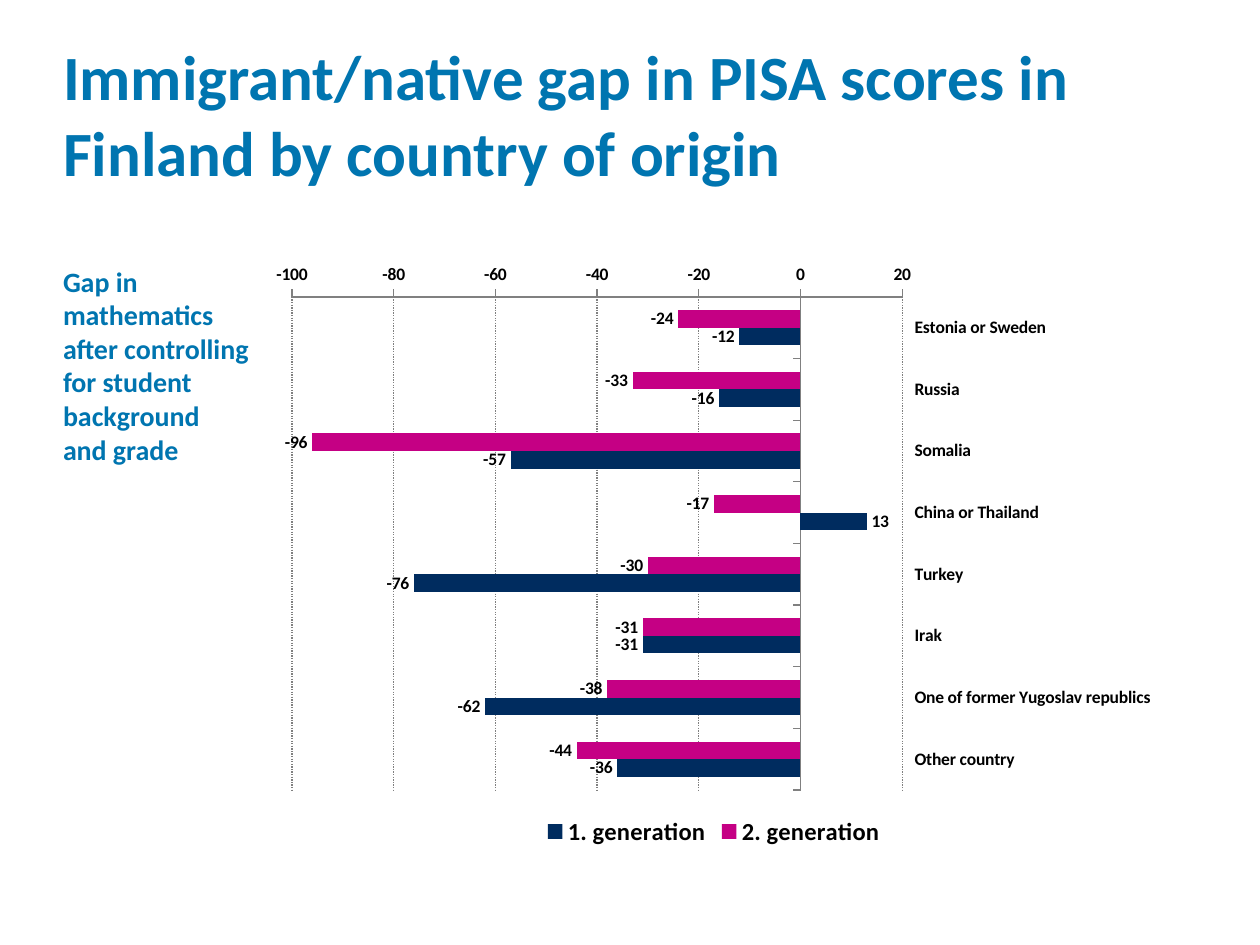
import pptx
import pptx.chart.data
import pptx.dml.color
import pptx.enum.chart
import pptx.enum.dml
import pptx.enum.text
import pptx.oxml
import pptx.oxml.ns
import pptx.util

RGBColor = pptx.dml.color.RGBColor
BLUE = RGBColor(0x00, 0x75, 0xB0)
PINK = RGBColor(0xC5, 0x00, 0x84)
NAVY = RGBColor(0x00, 0x2C, 0x5F)
BLACK = RGBColor(0x00, 0x00, 0x00)
GREY = RGBColor(0x80, 0x80, 0x80)

# Content
HEADING = "Immigrant/native gap in PISA scores in Finland by country of origin"
SUBHEADING = ["Gap in", "mathematics", "after controlling", "for student",
              "background", "and grade"]
COUNTRIES = ["Estonia or Sweden", "Russia", "Somalia", "China or Thailand",
             "Turkey", "Irak", "One of former Yugoslav republics",
             "Other country"]
GENERATIONS = [
    ("2. generation", PINK, [-24, -33, -96, -17, -30, -31, -38, -44]),
    ("1. generation", NAVY, [-12, -16, -57, 13, -76, -31, -62, -36]),
]
# Plot area as shares of the chart's size
PLOT = {"x": 0.037, "y": 0.073, "w": 0.67, "h": 0.824}


def apply_format(target, values):
    for name, value in values.items():
        setattr(target, name, value)


def set_font(font, size, color):
    apply_format(font, {"name": "Calibri", "size": pptx.util.Pt(size), "bold": True})
    font.color.rgb = color


def set_line(line, dash=None):
    line.color.rgb = GREY
    line.width = pptx.util.Pt(0.75)
    if dash:
        line.dash_style = dash


def set_plot_layout(chart, shares):
    parts = "".join(f'<c:{key} val="{value}"/>' for key, value in shares.items())
    layout = pptx.oxml.parse_xml(
        f'<c:layout {pptx.oxml.ns.nsdecls("c")}><c:manualLayout>'
        '<c:layoutTarget val="inner"/><c:xMode val="edge"/><c:yMode val="edge"/>'
        f"{parts}</c:manualLayout></c:layout>")
    plot_area = chart.element.find(".//" + pptx.oxml.ns.qn("c:plotArea"))
    for old in plot_area.findall(pptx.oxml.ns.qn("c:layout")):
        plot_area.remove(old)
    plot_area.insert(0, layout)


def add_heading(slide):
    title = slide.shapes.title
    inches = pptx.util.Inches
    apply_format(title, {"left": inches(0.5), "top": inches(0.3),
                         "width": inches(9), "height": inches(1.25)})
    frame = title.text_frame
    apply_format(frame, {
        "margin_left": 0, "margin_top": 0, "margin_right": 0, "margin_bottom": 0,
        "word_wrap": True, "auto_size": pptx.enum.text.MSO_AUTO_SIZE.NONE,
        "vertical_anchor": pptx.enum.text.MSO_ANCHOR.TOP})
    rows = [(HEADING, 36, 0), ("\v".join(SUBHEADING), 16, 43)]
    for index, (text, size, gap) in enumerate(rows):
        paragraph = frame.add_paragraph() if index else frame.paragraphs[0]
        paragraph.text = text
        paragraph.alignment = pptx.enum.text.PP_ALIGN.LEFT
        paragraph.space_before = pptx.util.Pt(gap)
        for run in paragraph.runs:
            set_font(run.font, size, BLUE)


def add_gap_chart(slide):
    enums = pptx.enum.chart
    data = pptx.chart.data.CategoryChartData(number_format="0")
    data.categories = COUNTRIES
    for name, _, gaps in GENERATIONS:
        data.add_series(name, gaps)
    box = [pptx.util.Inches(v) for v in (2.05, 2.01, 7.23, 4.75)]
    chart = slide.shapes.add_chart(enums.XL_CHART_TYPE.BAR_CLUSTERED, *box, data).chart
    chart.has_title = False
    set_font(chart.font, 10, BLACK)
    set_plot_layout(chart, PLOT)

    # Bars and their labels
    plot = chart.plots[0]
    apply_format(plot, {"gap_width": 150 - 75 * 0, "overlap": 0,
                        "vary_by_categories": False, "has_data_labels": True})
    apply_format(plot.data_labels, {
        "show_value": True, "number_format": "0", "number_format_is_linked": False,
        "position": enums.XL_LABEL_POSITION.OUTSIDE_END})
    set_font(plot.data_labels.font, 10, BLACK)
    for series, (_, color, _) in zip(plot.series, GENERATIONS):
        series.invert_if_negative = False
        series.format.fill.solid()
        series.format.fill.fore_color.rgb = color

    # Axes
    countries, scores = chart.category_axis, chart.value_axis
    apply_format(countries, {
        "reverse_order": True, "has_major_gridlines": False,
        "tick_label_position": enums.XL_TICK_LABEL_POSITION.HIGH})
    apply_format(scores, {"minimum_scale": -100, "maximum_scale": 20,
                          "major_unit": 20, "has_major_gridlines": True})
    apply_format(scores.tick_labels, {"number_format": "0",
                                      "number_format_is_linked": False})
    for axis in (countries, scores):
        axis.major_tick_mark = enums.XL_TICK_MARK.OUTSIDE
        set_font(axis.tick_labels.font, 10, BLACK)
        set_line(axis.format.line)
    set_line(scores.major_gridlines.format.line,
             pptx.enum.dml.MSO_LINE.ROUND_DOT)

    # Legend
    chart.has_legend = True
    apply_format(chart.legend, {"position": enums.XL_LEGEND_POSITION.BOTTOM,
                                "include_in_layout": False})
    set_font(chart.legend.font, 14, BLACK)


def main():
    deck = pptx.Presentation()
    apply_format(deck, {"slide_width": pptx.util.Inches(10),
                        "slide_height": pptx.util.Inches(7.5)})
    slide = deck.slides.add_slide(deck.slide_layouts.get_by_name("Title Only"))
    add_heading(slide)
    add_gap_chart(slide)
    deck.save("out.pptx")


if __name__ == "__main__":
    main()
